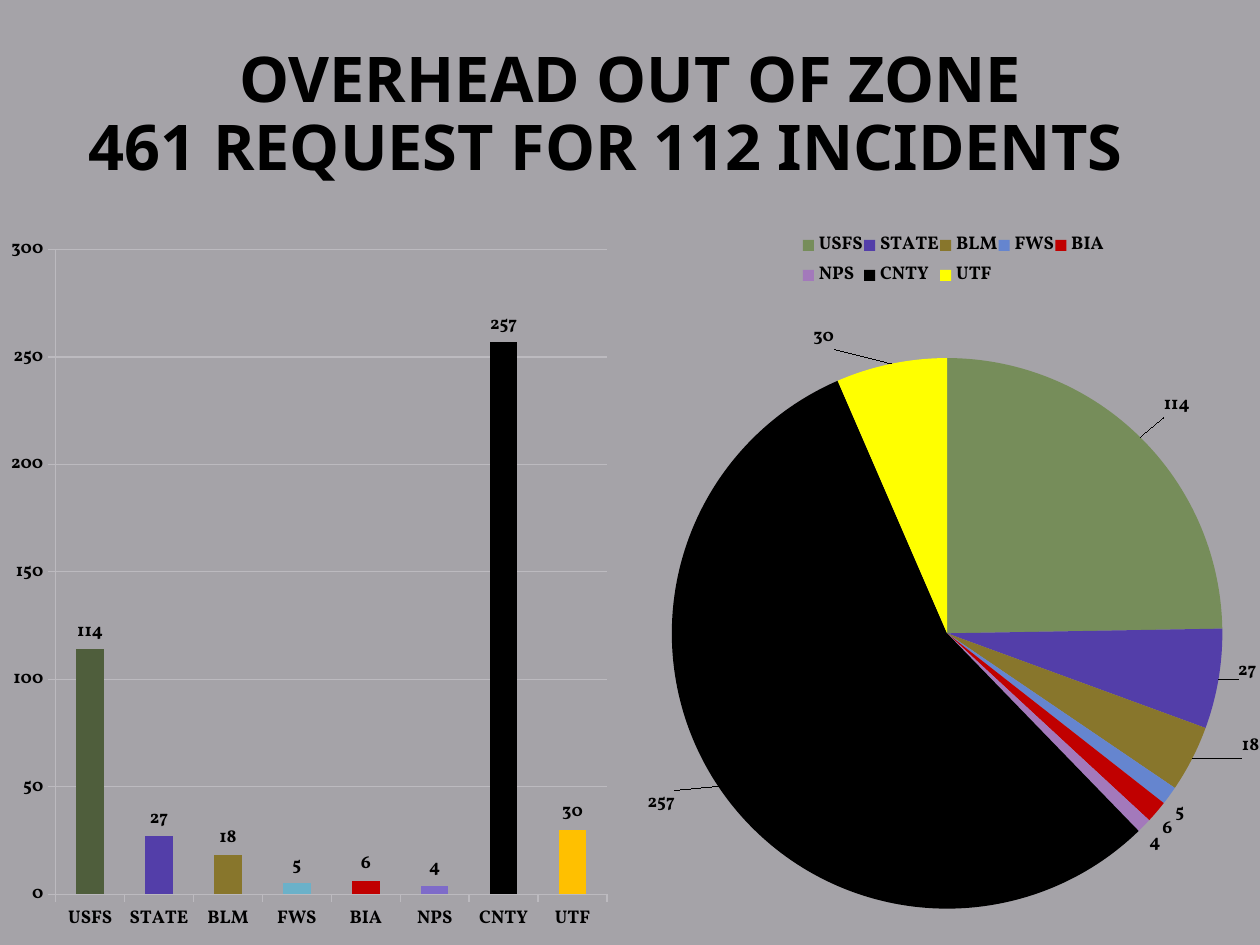
from lxml import etree
from pptx import Presentation
from pptx.chart.data import CategoryChartData
from pptx.dml.color import RGBColor
from pptx.enum.chart import XL_CHART_TYPE, XL_LABEL_POSITION, XL_LEGEND_POSITION, XL_TICK_MARK
from pptx.enum.text import MSO_ANCHOR, PP_ALIGN
from pptx.oxml.ns import qn
from pptx.util import Pt

BAR, PIE = XL_CHART_TYPE.COLUMN_CLUSTERED, XL_CHART_TYPE.PIE
OUTER = XL_LABEL_POSITION.OUTSIDE_END
TOP = XL_LEGEND_POSITION.TOP
TICK, NONE = XL_TICK_MARK.OUTSIDE, XL_TICK_MARK.NONE
MIDDLE, CENTER = MSO_ANCHOR.MIDDLE, PP_ALIGN.CENTER

HEX = {"back": "A5A3A8", "text": "000000", "grid": "BCBABF"}
TITLE = [("OVERHEAD OUT OF ZONE", 0), ("461 REQUEST FOR 112 INCIDENTS", 28)]
UNITS = [
    ("USFS", 114, "4F5E3C", "768D5A"),
    ("STATE", 27, "533EA9", "533EA9"),
    ("BLM", 18, "88762C", "88762C"),
    ("FWS", 5, "6BB1C9", "6585CF"),
    ("BIA", 6, "C00000", "C00000"),
    ("NPS", 4, "7E6BC9", "A379BB"),
    ("CNTY", 257, "000000", "000000"),
    ("UTF", 30, "FFC000", "FFFF00"),
]
SHIFTS = {0: (0.03, -0.02), 1: (0.02, -0.03), 2: (0.07, -0.04),
          6: (-0.06, 0), 7: (-0.09, -0.01)}
WIDE, HIGH = 720, 540
CHART_W, CHART_H = 354, 414


def rgb(name):
    return RGBColor.from_string(HEX.get(name, name))


def style(font, size, face):
    font.size, font.name, font.bold = Pt(size), face, True
    font.color.rgb = rgb("text")


def write(para, text, size=36, face="Noto Sans", align=CENTER, right=0):
    para.alignment = align
    para.line_spacing = 0.9
    para.space_before = Pt(0)
    run = para.add_run()
    run.text = text
    style(run.font, size, face)
    if right:
        para._p.get_or_add_pPr().set("marR", str(Pt(right)))


def place(node, spot, index=0, **parts):
    for old in node.findall(qn("c:layout")):
        node.remove(old)
    layout = etree.Element(qn("c:layout"))
    manual = etree.SubElement(layout, qn("c:manualLayout"))
    for tag, val in {**parts, **dict(zip("xywh", spot))}.items():
        etree.SubElement(manual, qn("c:" + tag)).set("val", str(val))
    node.insert(index, layout)


def draw(slide, kind, left, spot, fills):
    data = CategoryChartData()
    data.categories = [unit[0] for unit in UNITS]
    data.add_series("Series 1", [unit[1] for unit in UNITS])
    frame = slide.shapes.add_chart(
        kind, Pt(left), Pt(HIGH - CHART_H), Pt(CHART_W), Pt(CHART_H), data)
    chart = frame.chart
    chart.has_title = chart.has_legend = False
    style(chart.font, 10.5, "Vollkorn")
    area = chart.element.xpath("//c:plotArea")[0]
    place(area, spot, layoutTarget="inner", xMode="edge", yMode="edge")
    plot = chart.plots[0]
    plot.vary_by_categories = kind == PIE
    series = plot.series[0]
    for i, color in enumerate(fills):
        fill = series.points[i].format.fill
        fill.solid()
        fill.fore_color.rgb = rgb(color)
    labels = series.data_labels
    labels.show_value = True
    labels.position = OUTER
    style(labels.font, 10.5, "Vollkorn")
    return chart


def main():
    deck = Presentation()
    deck.slide_width, deck.slide_height = Pt(WIDE), Pt(HIGH)
    slide = deck.slides.add_slide(deck.slide_layouts[5])
    slide.background.fill.solid()
    slide.background.fill.fore_color.rgb = rgb("back")

    title = slide.shapes.title
    title.left, title.top, title.width, title.height = Pt(36), Pt(21.6), Pt(648), Pt(90)
    box = title.text_frame
    box.vertical_anchor = MIDDLE
    for i, (text, right) in enumerate(TITLE):
        write(box.add_paragraph() if i else box.paragraphs[0], text, right=right)

    bars = draw(slide, BAR, 0, (0.09, 0.04, 0.89, 0.89), [unit[2] for unit in UNITS])
    bars.plots[0].gap_width = 150
    scale = bars.value_axis
    scale.minimum_scale, scale.maximum_scale, scale.major_unit = 0, 300, 50
    scale.has_major_gridlines = True
    scale.major_gridlines.format.line.color.rgb = rgb("grid")
    for axis in (scale, bars.category_axis):
        axis.major_tick_mark, axis.minor_tick_mark = TICK, NONE
        axis.format.line.color.rgb = rgb("grid")

    pie = draw(slide, PIE, WIDE - CHART_W, (0.05, 0.19, 0.89, 0.76),
               [unit[3] for unit in UNITS])
    pie.has_legend = True
    pie.legend.position = TOP
    pie.legend.include_in_layout = False
    place(pie.legend._element, (0.26, 0.01, 0.49, 0.09), 1, xMode="edge", yMode="edge")
    series = pie.plots[0].series[0]
    for i, shift in SHIFTS.items():
        label = series.points[i].data_label
        label.position = OUTER
        node = pie.element.xpath(f"//c:dLbl[c:idx/@val='{i}']")[0]
        place(node, shift, 1)

    deck.save("out.pptx")


if __name__ == "__main__":
    main()
